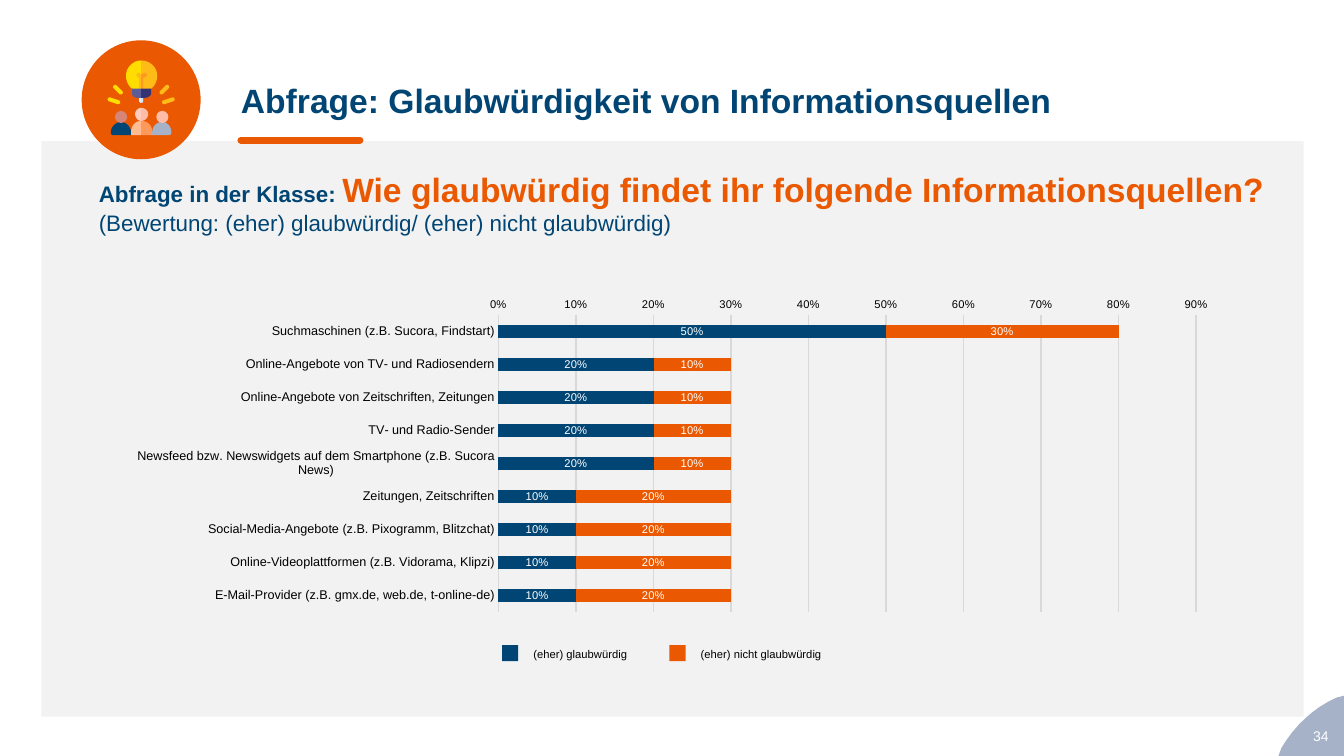
from lxml import etree
from pptx import Presentation
from pptx.chart.data import CategoryChartData
from pptx.dml.color import RGBColor
from pptx.enum.chart import XL_CHART_TYPE as CHART, XL_LABEL_POSITION as LABEL, XL_TICK_MARK as TICK
from pptx.enum.shapes import MSO_CONNECTOR as CONNECTOR, MSO_SHAPE as SHAPE
from pptx.enum.text import MSO_ANCHOR as ANCHOR, PP_ALIGN as ALIGN
from pptx.oxml import parse_xml
from pptx.oxml.ns import nsdecls, qn
from pptx.util import Pt

PX = 9144  # 100 px to the inch
FONT = "Arial"
COLORS = {
    "white": "FFFFFF", "black": "000000", "panel": "F2F2F2", "grid": "D9D9D9",
    "navy": "004573", "orange": "EA5901", "steel": "A5B2C8",
    "yellow": "FFDD00", "amber": "FFBB17", "filament": "FF9922",
    "socket": "5C5C99", "socket dark": "333373",
    "neck": "E6F2FF", "neck dark": "CCE6FF", "brown skin": "D58678",
    "skin": "FFCCBD", "skin dark": "FFBDA9", "shirt": "FFBB91", "shirt dark": "FE985B",
}
AXIS = 140  # middle of the icon

# Outlines: M and L take one point, C takes three
CORNER = "M 1334 690 L 1334 750 L 1268 750 L 1271 742 C 1284 720 1303 702 1326 692"
BULB_PARTS = [
    ("neck", "M 140 93 L 141 98 L 140 102 C 139 102 138 101 138 100 L 138 96 C 138 94 139 93 140 93"),
    ("neck dark", "M 142 96 L 142 100 C 142 101 142 102 140 102 L 140 93 C 142 93 142 94 142 96"),
    ("yellow", "M 140 60 L 148 75 L 140 90 L 131 88 C 127 85 125 80 125 75 C 125 67 132 60 140 60"),
    ("amber", "M 156 75 C 156 80 154 85 150 88 L 140 90 L 140 60 C 149 60 156 67 156 75"),
    ("amber", "M 142 88 L 140 89 L 138 88 L 138 78 L 136 76 C 135 75 135 74 136 73 "
              "C 136 72 138 72 139 73 L 140 74 L 142 78 L 140 88"),
    ("filament", "M 145 76 L 142 78 L 142 88 L 140 88 L 140 74 L 142 73 "
                 "C 143 72 144 72 145 73 C 146 74 146 75 145 76"),
    ("socket", "M 140 88 L 144 92 L 140 97 L 136 97 C 133 97 131 95 131 92 L 131 88"),
    ("socket dark", "M 150 88 L 150 92 C 150 95 147 97 144 97 L 140 97 L 140 88"),
]
PEOPLE_PARTS = [
    ("navy", "M 130 134 L 112 134 C 111 134 110 133 110 132 L 110 131 "
             "C 110 126 115 121 120 121 C 125 121 130 126 130 131 L 131 133"),
    ("steel", "M 151 134 L 168 134 C 169 134 170 133 170 132 L 170 131 "
              "C 170 126 166 121 161 121 C 155 121 151 126 151 131 L 150 133"),
    ("skin", "M 140 107 L 146 116 L 140 120 C 137 120 134 117 134 113 C 134 110 137 107 140 107"),
    ("shirt", "M 140 120 L 144 129 L 140 134 L 130 134 L 130 131 C 130 125 134 120 140 120"),
    ("shirt dark", "M 151 131 L 151 134 L 140 134 L 140 120 C 143 120 146 121 148 123 "
                   "C 150 125 151 128 151 131"),
    ("skin dark", "M 147 113 C 147 117 144 120 140 120 L 140 107 C 144 107 147 110 147 113"),
]

RATINGS = [  # source, credible, not credible
    ("Suchmaschinen (z.B. Sucora, Findstart)", 0.5, 0.3),
    ("Online-Angebote von TV- und Radiosendern", 0.2, 0.1),
    ("Online-Angebote von Zeitschriften, Zeitungen", 0.2, 0.1),
    ("TV- und Radio-Sender", 0.2, 0.1),
    ("Newsfeed bzw. Newswidgets auf dem Smartphone (z.B. Sucora News)", 0.2, 0.1),
    ("Zeitungen, Zeitschriften", 0.1, 0.2),
    ("Social-Media-Angebote (z.B. Pixogramm, Blitzchat)", 0.1, 0.2),
    ("Online-Videoplattformen (z.B. Vidorama, Klipzi)", 0.1, 0.2),
    ("E-Mail-Provider (z.B. gmx.de, web.de, t-online-de)", 0.1, 0.2),
]
ANSWERS = [("(eher) glaubwürdig", "navy"), ("(eher) nicht glaubwürdig", "orange")]


def rgb(name):
    return RGBColor.from_string(COLORS[name])


def emu(*lengths):
    return [round(v * PX) for v in lengths]


def style_font(font, size, color, bold=False):
    font.name, font.size, font.bold = FONT, Pt(size), bold
    font.color.rgb = rgb(color)


def paint(sp, color):
    sp.shadow.inherit = False
    sp.fill.solid()
    sp.fill.fore_color.rgb = rgb(color)
    sp.line.fill.background()


def add_block(s, kind, box, color):
    sp = s.shapes.add_shape(kind, *emu(*box))
    paint(sp, color)
    return sp


def bezier(points, steps=8):
    """Return points along a cubic curve, without its first point."""
    for i in range(1, steps + 1):
        t = i / steps
        weights = ((1 - t) ** 3, 3 * t * (1 - t) ** 2, 3 * t * t * (1 - t), t ** 3)
        yield tuple(sum(w * pt[k] for w, pt in zip(weights, points)) for k in (0, 1))


def add_outline(s, color, outline):
    words = iter(outline.split())
    points = []
    for command in words:
        ends = [(int(next(words)), int(next(words))) for _ in range(3 if command == "C" else 1)]
        points += bezier([points[-1], *ends]) if command == "C" else ends
    builder = s.shapes.build_freeform(*emu(*points[0]))
    builder.add_line_segments([emu(*pt) for pt in points[1:]], close=True)
    paint(builder.convert_to_shape(), color)


def add_text(s, box, paragraphs, align=ALIGN.LEFT, anchor=ANCHOR.TOP):
    """Each paragraph is a list of runs: text, size, colour and optional bold."""
    tf = s.shapes.add_textbox(*emu(*box)).text_frame
    tf.word_wrap, tf.vertical_anchor = True, anchor
    tf.margin_left = tf.margin_right = tf.margin_top = tf.margin_bottom = 0
    for i, runs in enumerate(paragraphs):
        p = tf.paragraphs[0] if i == 0 else tf.add_paragraph()
        p.alignment = align
        for text, *style in runs:
            r = p.add_run()
            r.text = text
            style_font(p.font if len(runs) == 1 else r.font, *style)


def add_underline(s, x1, x2, y):
    line = s.shapes.add_connector(CONNECTOR.STRAIGHT, *emu(x1, y, x2, y))
    line.line.color.rgb = rgb("orange")
    line.line.width = Pt(5)
    line.line._get_or_add_ln().set("cap", "rnd")
    etree.SubElement(line._element.spPr, qn("a:effectLst"))


def add_icon(s):
    add_block(s, SHAPE.OVAL, (81, 40, 118, 118), "orange")
    for side, color in ((-1, "yellow"), (1, "amber")):
        for dx, y, length, angle in ((23, 89, 12, 45), (27, 100, 13, 18)):
            ray = add_block(s, SHAPE.ROUNDED_RECTANGLE,
                            (AXIS + side * dx - length / 2, y - 2, length, 4), color)
            ray.adjustments[0] = 0.5
            ray.rotation = -side * angle
    for part in BULB_PARTS + PEOPLE_PARTS:
        add_outline(s, *part)
    for x, color in ((114, "brown skin"), (155, "skin dark")):
        add_block(s, SHAPE.OVAL, (x, 110, 12, 12), color)


def add_legend(s):
    for i, (answer, color) in enumerate(ANSWERS):
        x = 498 + 166 * i
        add_block(s, SHAPE.RECTANGLE, (x, 640, 16, 16), color)
        add_text(s, (x + 31, 642, 315, 13), [[(answer, 8, "black")]])


def set_plot_layout(chart, **fractions):
    area = chart._chartSpace.chart.plotArea
    for old in area.findall(qn("c:layout")):
        area.remove(old)
    sizes = "".join(f'<c:{k} val="{v}"/>' for k, v in fractions.items())
    area.insert(0, parse_xml(
        f'<c:layout {nsdecls("c")}><c:manualLayout><c:layoutTarget val="inner"/>'
        f'<c:xMode val="edge"/><c:yMode val="edge"/>{sizes}</c:manualLayout></c:layout>'))


def add_ratings_chart(s, box):
    sources, *columns = zip(*RATINGS)
    data = CategoryChartData(number_format="0%")
    data.categories = sources
    for (answer, _), values in zip(ANSWERS, columns):
        data.add_series(answer, values)
    chart = s.shapes.add_chart(CHART.BAR_STACKED, *emu(*box), data).chart
    chart.has_legend = chart.has_title = False
    style_font(chart.font, 10, "black")
    set_plot_layout(chart, x=0.34, y=0.11, w=0.62, h=0.85)

    plot = chart.plots[0]
    plot.gap_width, plot.overlap, plot.vary_by_categories = 150, 100, False
    for series, (_, color) in zip(plot.series, ANSWERS):
        series.format.fill.solid()
        series.format.fill.fore_color.rgb = rgb(color)
        labels = series.data_labels
        labels.show_value, labels.position = True, LABEL.CENTER
        labels.number_format, labels.number_format_is_linked = "0%", False
        style_font(labels.font, 8, "white")

    cat, val = chart.category_axis, chart.value_axis
    for axis, size in ((cat, 9), (val, 8)):
        axis.major_tick_mark = axis.minor_tick_mark = TICK.NONE
        style_font(axis.tick_labels.font, size, "black")
    cat.reverse_order = True
    val.minimum_scale, val.maximum_scale, val.major_unit = 0, 0.9, 0.1
    val.tick_labels.number_format, val.tick_labels.number_format_is_linked = "0%", False
    val.format.line.fill.background()
    val.has_major_gridlines = True
    for line in (cat.format.line, val.major_gridlines.format.line):
        line.color.rgb = rgb("grid")
        line.width = Pt(1)


def main():
    prs = Presentation()
    prs.slide_width, prs.slide_height = emu(1333, 750)
    s = prs.slides.add_slide(prs.slide_layouts[6])
    add_outline(s, "steel", CORNER)
    add_text(s, (1294, 722, 32, 17), [[("34", 10, "white")]], ALIGN.CENTER)
    add_block(s, SHAPE.RECTANGLE, (41, 140, 1252, 571), "panel")
    add_text(s, (239, 79, 804, 40),
             [[("Abfrage: Glaubwürdigkeit von Informationsquellen", 24, "navy", True)]],
             anchor=ANCHOR.MIDDLE)
    add_underline(s, 239, 357, 139)
    add_icon(s)
    add_text(s, (98, 168, 1178, 67), [
        [("Abfrage in der Klasse: ", 16, "navy", True),
         ("Wie glaubwürdig findet ihr folgende Informationsquellen?", 24, "orange", True)],
        [("(Bewertung: (eher) glaubwürdig/ (eher) nicht glaubwürdig)", 16, "navy")],
    ])
    add_legend(s)
    add_ratings_chart(s, (115, 274, 1116, 347))
    prs.save("out.pptx")


if __name__ == "__main__":
    main()
